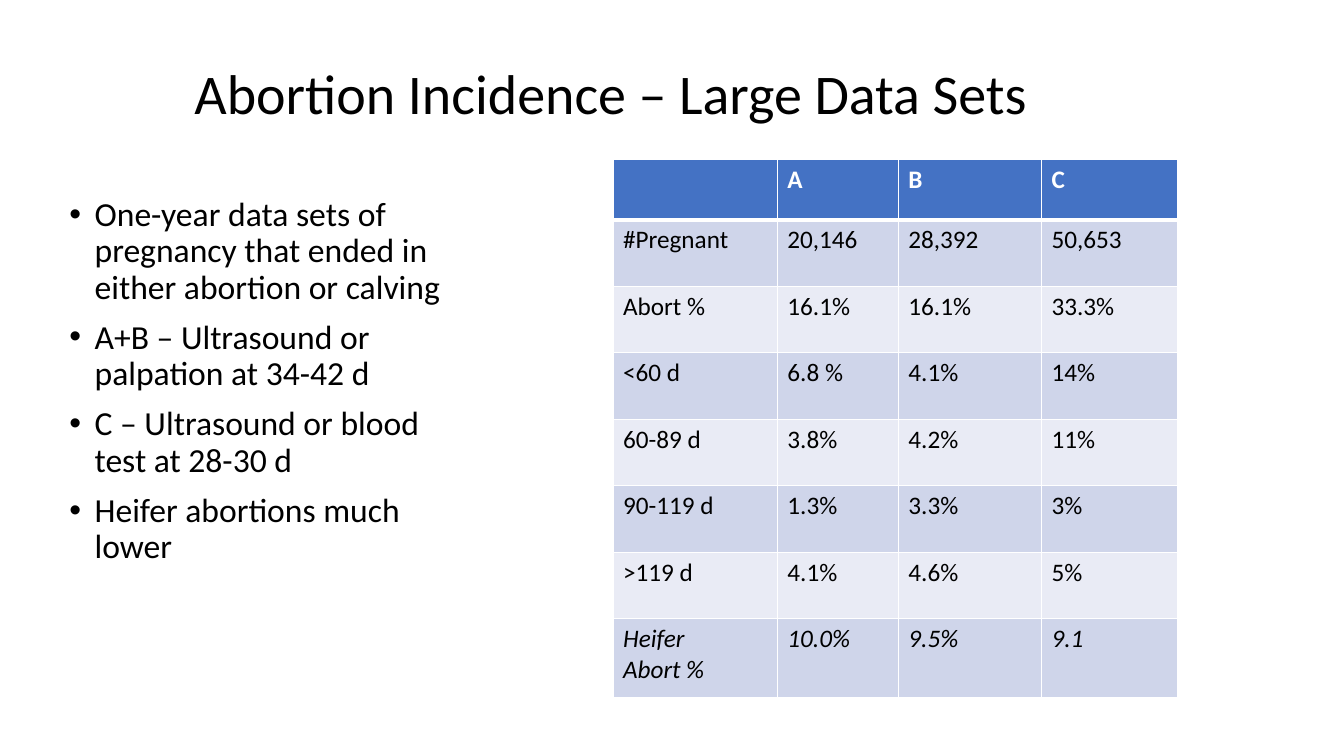
from pptx import Presentation
from pptx.dml.color import RGBColor as RGB
from pptx.enum.text import MSO_ANCHOR as Anchor
from pptx.oxml import parse_xml
from pptx.oxml.ns import nsdecls
from pptx.util import Pt

PX = 9144  # 100 px to the inch
FONT = "Calibri"
BLACK = RGB(0, 0, 0)
WHITE = RGB(255, 255, 255)
BLUE = RGB(0x44, 0x72, 0xC4)
DARK = RGB(0xCF, 0xD5, 0xEA)
LIGHT = RGB(0xE9, 0xEB, 0xF5)


def write(frame, text, size=18, color=BLACK, bold=False, italic=False,
          bullet=False, line=None, gap=0):
    """Fill a text frame, one paragraph for each line of text."""
    frame.word_wrap = True
    for i, part in enumerate(text.split("\n")):
        para = frame.add_paragraph() if i else frame.paragraphs[0]
        if bullet:
            props = para._p.get_or_add_pPr()
            props.set("marL", str(25 * PX))
            props.set("indent", str(-25 * PX))
            props.append(parse_xml(f'<a:buFont {nsdecls("a")} typeface="Arial"/>'))
            props.append(parse_xml(f'<a:buChar {nsdecls("a")} char="•"/>'))
        if line:
            para.line_spacing = line
        if i and gap:
            para.space_before = Pt(gap)
        run = para.add_run()
        run.text = part
        font = run.font
        font.name, font.size = FONT, Pt(size)
        font.bold, font.italic = bold, italic
        font.color.rgb = color


def edge(cell, side, width):
    """Draw one white border of a cell."""
    cell._tc.get_or_add_tcPr().append(parse_xml(
        f'<a:ln{side} {nsdecls("a")} w="{Pt(width)}"><a:solidFill>'
        f'<a:srgbClr val="{WHITE}"/></a:solidFill></a:ln{side}>'))


deck = Presentation()
deck.slide_width, deck.slide_height = 1333 * PX, 750 * PX
slide = deck.slides.add_slide(deck.slide_layouts[6])
shapes = slide.shapes

# Title
title = shapes.add_textbox(183 * PX, 33 * PX, 942 * PX, 125 * PX).text_frame
title.vertical_anchor = Anchor.MIDDLE
write(title, "Abortion Incidence – Large Data Sets", size=40, line=0.9)

# Bullet list
points = [
    "One-year data sets of pregnancy that ended in either abortion or calving",
    "A+B – Ultrasound or palpation at 34-42 d",
    "C – Ultrasound or blood test at 28-30 d",
    "Heifer abortions much lower",
]
body = shapes.add_textbox(59 * PX, 191 * PX, 408 * PX, 500 * PX).text_frame
write(body, "\n".join(points), size=24, bullet=True, line=0.9, gap=10)

# Table
data = [
    ["", "A", "B", "C"],
    ["#Pregnant", "20,146", "28,392", "50,653"],
    ["Abort %", "16.1%", "16.1%", "33.3%"],
    ["<60 d", "6.8 %", "4.1%", "14%"],
    ["60-89 d", "3.8%", "4.2%", "11%"],
    ["90-119 d", "1.3%", "3.3%", "3%"],
    [">119 d", "4.1%", "4.6%", "5%"],
    ["Heifer\nAbort %", "10.0%", "9.5%", "9.1"],
]
widths = [163, 120, 142, 135]
heights = [60] + [66] * 6 + [78]
last = len(data) - 1
table = shapes.add_table(len(data), len(widths), 608 * PX, 158 * PX,
                         sum(widths) * PX, sum(heights) * PX).table
for col, width in zip(table.columns, widths):
    col.width = width * PX
for r, (row, height) in enumerate(zip(data, heights)):
    table.rows[r].height = height * PX
    head = r == 0
    for c, text in enumerate(row):
        cell = table.cell(r, c)
        for side in "LRTB":
            thick = (head and side == "B") or (r == 1 and side == "T")
            edge(cell, side, 3 if thick else 1)
        cell.fill.solid()
        cell.fill.fore_color.rgb = BLUE if head else DARK if r % 2 else LIGHT
        write(cell.text_frame, text, color=WHITE if head else BLACK,
              bold=head, italic=r == last)

deck.save("out.pptx")
